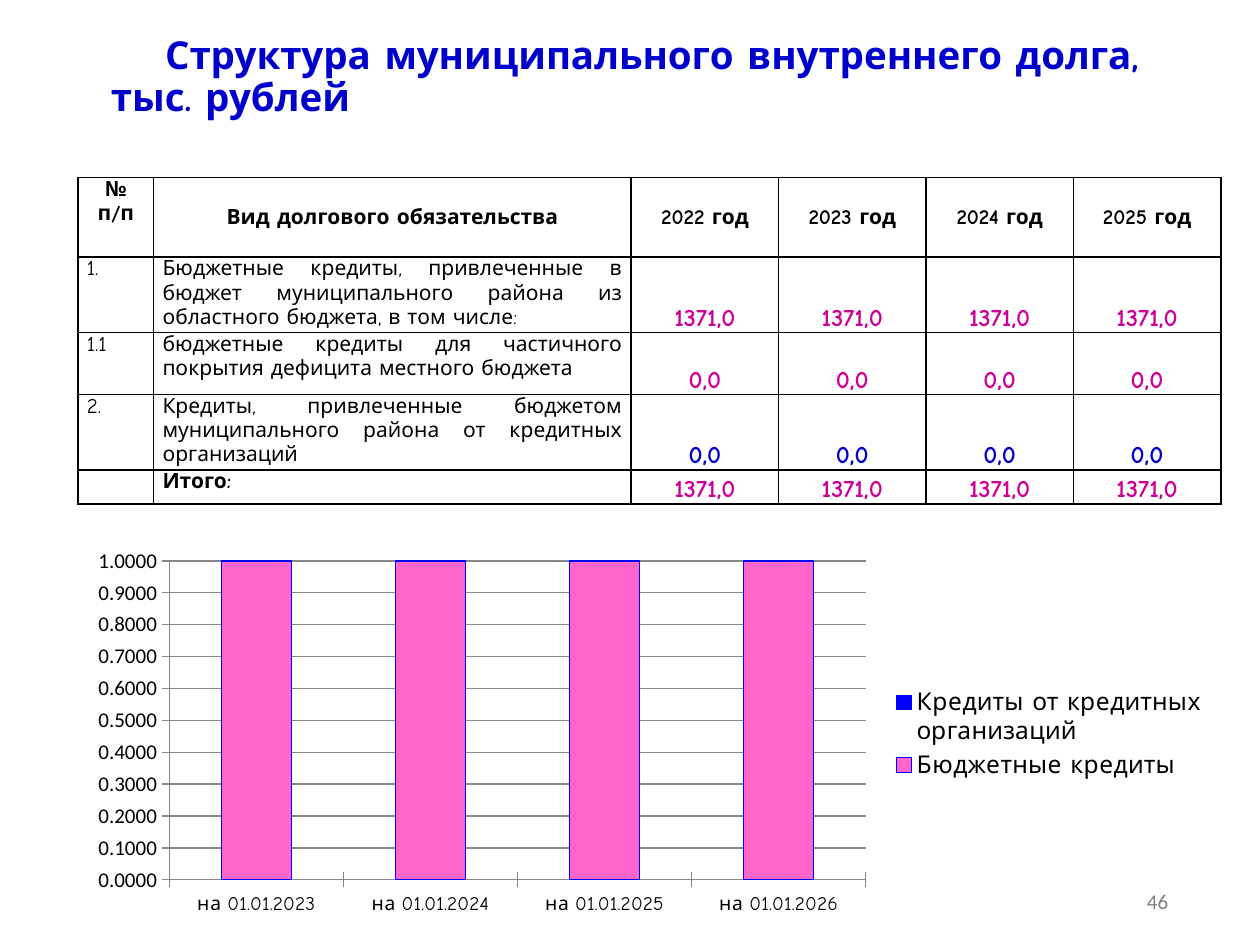
from dataclasses import dataclass

from lxml import etree
from pptx import Presentation
from pptx import util as u
from pptx.chart import data as chart_data
from pptx.dml.color import RGBColor
from pptx.enum import chart as ch, text as t
from pptx.oxml import ns


@dataclass(frozen=True)
class Theme:
    font: str = "Comic Neue"
    plain_font: str = "Calibri"
    black: str = "000000"
    blue: str = "0000CC"
    magenta: str = "CC0099"
    gray: str = "808080"
    grid: str = "868686"
    title: int = 22
    value: int = 14
    text: int = 12
    small: int = 11


theme = Theme()
WIDTH, HEIGHT = 10, 7.5
LEFT, CONTENT_WIDTH = 0.62, 9.06

TITLE = "Структура муниципального внутреннего долга,\vтыс. рублей"
PAGE = "46"
HEADER = ["№ п/п", "Вид долгового обязательства"] + [f"{year} год" for year in range(2022, 2026)]
ROWS = [
    ("1.", "Бюджетные кредиты, привлеченные в бюджет муниципального района "
           "из областного бюджета, в том числе:", "1371,0", theme.magenta),
    ("1.1", "бюджетные кредиты для частичного покрытия дефицита местного бюджета",
     "0,0", theme.magenta),
    ("2.", "Кредиты, привлеченные бюджетом муниципального района от кредитных организаций",
     "0,0", theme.blue),
    ("", "Итого:", "1371,0", theme.magenta),
]
COLUMN_WIDTHS = [0.6, 3.79] + [1.17] * 4
ROW_HEIGHTS = [0.63, 0.6, 0.49, 0.6, 0.27]
CATEGORIES = [f"на 01.01.{year}" for year in range(2023, 2027)]
SERIES = [
    ("Бюджетные кредиты", [100] * 4, "FF66CC"),
    ("Кредиты от кредитных организаций", [None] * 4, "0000FF"),
]


def box(left, top, width, height):
    return [u.Inches(value) for value in (left, top, width, height)]


def set_font(font, size, color=theme.black, bold=False, name=theme.font):
    font.name, font.size, font.bold = name, u.Pt(size), bold
    font.color.rgb = RGBColor.from_string(color)


def add_title(slide):
    title = slide.shapes.title
    title.left, title.top, title.width, title.height = box(0.78, 0.23, 8.83, 0.78)
    frame = title.text_frame
    frame.text = TITLE
    frame.word_wrap = True
    frame.auto_size = t.MSO_AUTO_SIZE.NONE
    frame.vertical_anchor = t.MSO_ANCHOR.MIDDLE
    paragraph = frame.paragraphs[0]
    paragraph.alignment = t.PP_ALIGN.LEFT
    paragraph.line_spacing = 0.9
    properties = paragraph._p.get_or_add_pPr()
    properties.set("marL", "0")
    properties.set("indent", str(u.Inches(0.43)))
    set_font(paragraph.font, theme.title, theme.blue, True)


def add_page_number(slide):
    frame = slide.shapes.add_textbox(*box(7.06, 6.95, 2.31, 0.4)).text_frame
    frame.word_wrap = True
    frame.vertical_anchor = t.MSO_ANCHOR.MIDDLE
    frame.text = PAGE
    paragraph = frame.paragraphs[0]
    paragraph.alignment = t.PP_ALIGN.RIGHT
    set_font(paragraph.font, theme.text, theme.gray, name=theme.plain_font)


def add_borders(cell):
    properties = cell._tc.get_or_add_tcPr()
    for index, side in enumerate(("lnL", "lnR", "lnT", "lnB")):
        line = etree.Element(ns.qn(f"a:{side}"), w=str(u.Pt(1)))
        fill = etree.SubElement(line, ns.qn("a:solidFill"))
        etree.SubElement(fill, ns.qn("a:srgbClr"), val=theme.black)
        properties.insert(index, line)


def fill_cell(cell, text, align, anchor, size=theme.text, color=theme.black, bold=False):
    cell.margin_left = cell.margin_right = u.Inches(0.07)
    cell.margin_top = cell.margin_bottom = 0
    cell.vertical_anchor = anchor
    cell.fill.background()
    add_borders(cell)
    cell.text = text
    paragraph = cell.text_frame.paragraphs[0]
    paragraph.alignment = align
    set_font(paragraph.font, size, color, bold)


def add_debt_table(slide):
    table = slide.shapes.add_table(
        len(ROW_HEIGHTS), len(COLUMN_WIDTHS),
        *box(LEFT, 1.41, CONTENT_WIDTH, sum(ROW_HEIGHTS))).table
    table.first_row = table.horz_banding = False
    for column, width in zip(table.columns, COLUMN_WIDTHS):
        column.width = u.Inches(width)
    for row, height in zip(table.rows, ROW_HEIGHTS):
        row.height = u.Inches(height)
    align, anchor = t.PP_ALIGN, t.MSO_ANCHOR
    for column, text in enumerate(HEADER):
        fill_cell(table.cell(0, column), text, align.CENTER,
                  anchor.MIDDLE if column else anchor.TOP, bold=True)
    for row, (number, name, value, color) in enumerate(ROWS, 1):
        total = not number
        fill_cell(table.cell(row, 0), number, align.LEFT, anchor.TOP)
        fill_cell(table.cell(row, 1), name, align.LEFT if total else align.JUSTIFY,
                  anchor.TOP, bold=total)
        for column in range(2, len(HEADER)):
            fill_cell(table.cell(row, column), value, align.CENTER, anchor.BOTTOM,
                      theme.value, color, True)


def set_plot_layout(chart, **shares):
    plot_area = chart._chartSpace.chart.plotArea
    for old in plot_area.findall(ns.qn("c:layout")):
        plot_area.remove(old)
    layout = etree.Element(ns.qn("c:layout"))
    manual = etree.SubElement(layout, ns.qn("c:manualLayout"))
    settings = {"layoutTarget": "inner", "xMode": "edge", "yMode": "edge", **shares}
    for name, value in settings.items():
        etree.SubElement(manual, ns.qn(f"c:{name}"), val=str(value))
    plot_area.insert(0, layout)


def add_debt_chart(slide):
    data = chart_data.CategoryChartData()
    data.categories = CATEGORIES
    for name, values, _ in SERIES:
        data.add_series(name, values)
    chart = slide.shapes.add_chart(
        ch.XL_CHART_TYPE.COLUMN_STACKED_100, *box(LEFT, 4.3, CONTENT_WIDTH, 3.05), data).chart
    chart.has_title = False
    set_font(chart.font, 18, name=theme.plain_font)
    plot = chart.plots[0]
    plot.gap_width, plot.overlap, plot.vary_by_categories = 150, 100, False
    for series, (_, _, color) in zip(plot.series, SERIES):
        series.format.fill.solid()
        series.format.fill.fore_color.rgb = RGBColor.from_string(color)
        series.format.line.color.rgb = RGBColor.from_string("0000FF")
        series.format.line.width = u.Pt(0.75)

    category, value = chart.category_axis, chart.value_axis
    set_font(category.tick_labels.font, theme.small)
    set_font(value.tick_labels.font, theme.text, name=theme.plain_font)
    for axis in (category, value):
        axis.major_tick_mark = ch.XL_TICK_MARK.CROSS
        axis.format.line.color.rgb = RGBColor.from_string(theme.grid)
    value.minimum_scale, value.maximum_scale, value.major_unit = 0, 1, 0.1
    value.tick_labels.number_format = "#,##0.0000"
    value.tick_labels.number_format_is_linked = False
    value.has_major_gridlines = True
    value.major_gridlines.format.line.color.rgb = RGBColor.from_string(theme.grid)

    chart.has_legend = True
    chart.legend.position = ch.XL_LEGEND_POSITION.RIGHT
    chart.legend.include_in_layout = False
    set_font(chart.legend.font, theme.value)
    set_plot_layout(chart, x=0.08, y=0.05, w=0.61, h=0.83)


def main():
    presentation = Presentation()
    presentation.slide_width, presentation.slide_height = u.Inches(WIDTH), u.Inches(HEIGHT)
    slide = presentation.slides.add_slide(presentation.slide_layouts[5])
    add_title(slide)
    add_page_number(slide)
    add_debt_table(slide)
    add_debt_chart(slide)
    presentation.save("out.pptx")


if __name__ == "__main__":
    main()
